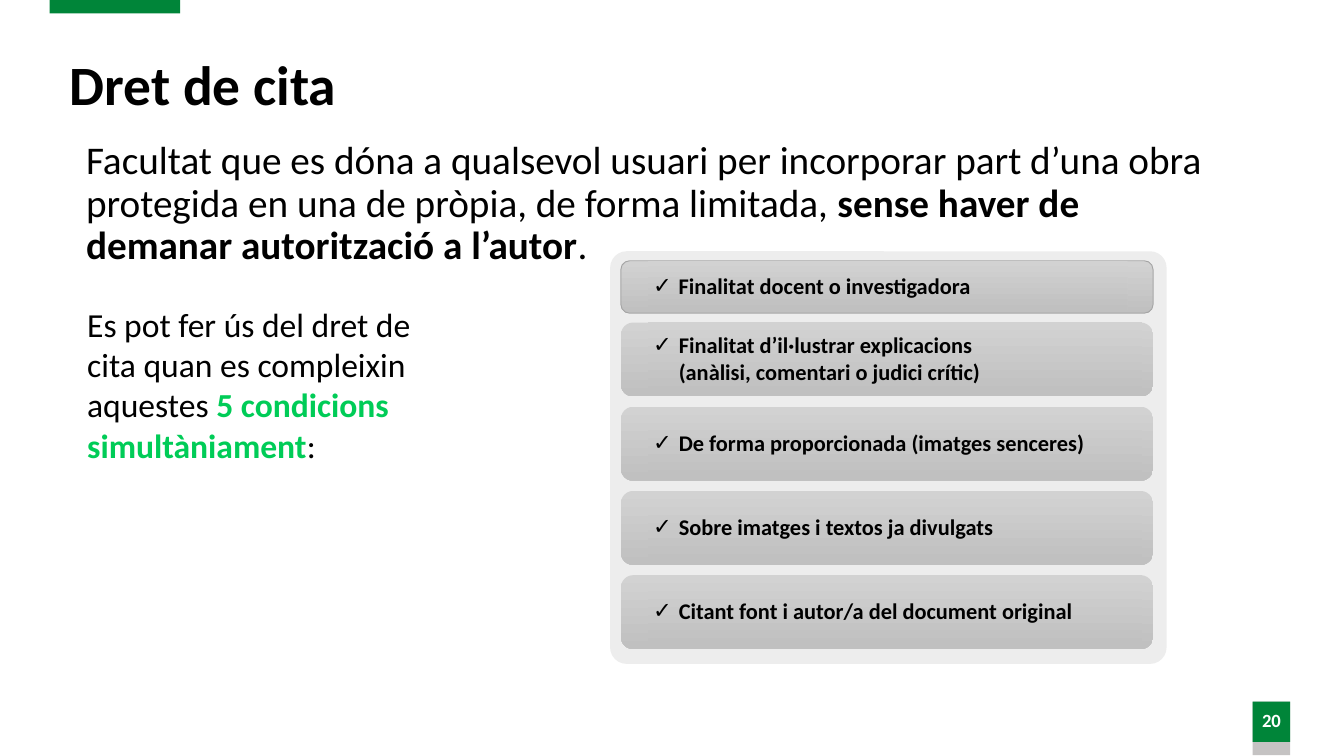
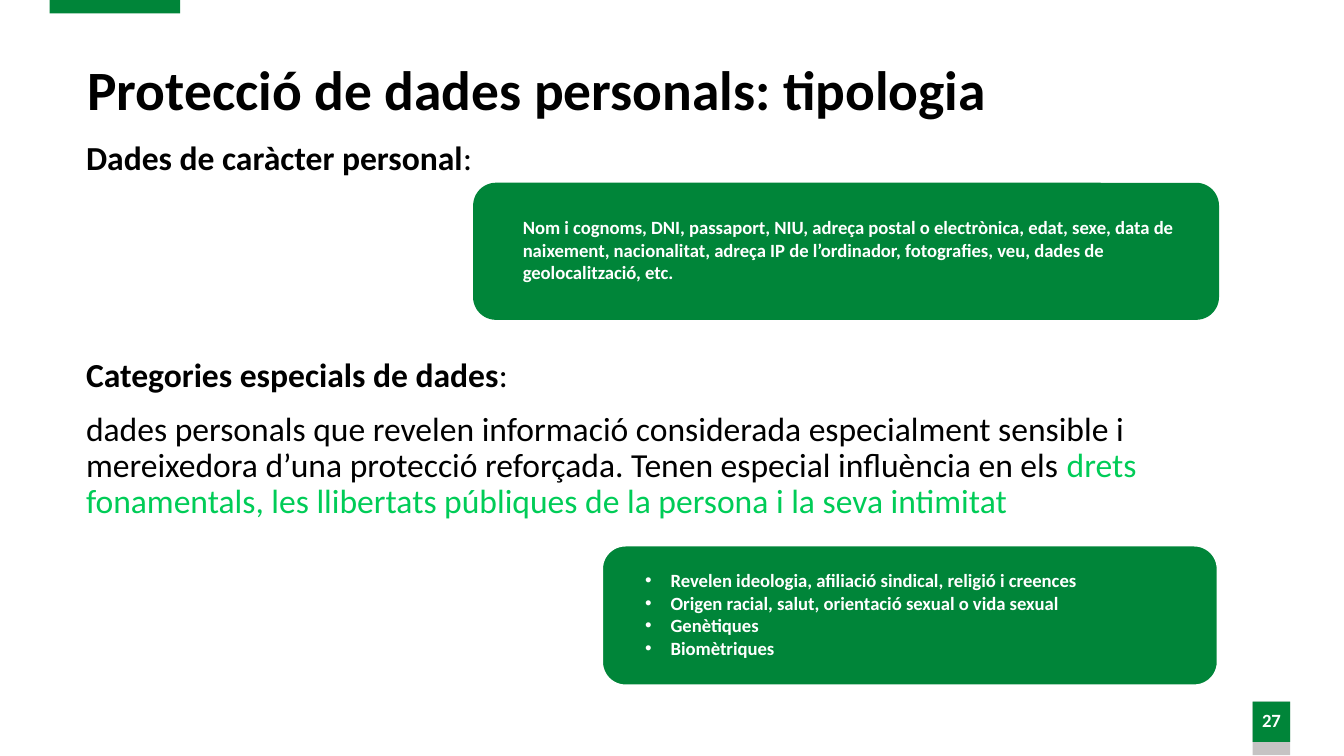
"""Build two slides on the right to quote and on personal data protection."""
from dataclasses import dataclass
from typing import NamedTuple, Optional

from lxml.etree import SubElement
from pptx import Presentation
from pptx.dml.color import RGBColor
from pptx.enum.shapes import MSO_SHAPE
from pptx.enum.text import MSO_ANCHOR, PP_ALIGN
from pptx.oxml.ns import qn
from pptx.util import Inches, Pt

COLORS = {
    "green": "008539",
    "accent": "00CC57",
    "black": "000000",
    "white": "FFFFFF",
    "tab": "C5C3C3",
    "panel": "EDEDED",
    "card_top": "D2D2D2",
    "card_bottom": "C0C0C0",
    "card_line": "A5A5A5",
}
FONT = "Calibri"
TIGHT = (0.04, 0.04, 0.04, 0.04)
BODY = (0.09, 0.04, 0.09, 0.04)
GRAY = ("card_top", "card_bottom")
GREEN = ("green",)


class Box(NamedTuple):
    left: float
    top: float
    width: float
    height: float

    def lengths(self):
        return [Inches(v) for v in self]


class Run(NamedTuple):
    text: str
    bold: bool = False
    color: str = "black"


@dataclass
class Card:
    box: Box
    label: Box
    lines: list[str]
    size: float
    fill: tuple[str, ...]
    color: str
    bullet: Optional[str] = None
    line: Optional[tuple[str, float]] = None


def rgb(name: str) -> RGBColor:
    return RGBColor.from_string(COLORS[name])


def add_bullet(p, char: str) -> None:
    pPr = p._p.get_or_add_pPr()
    pPr.set("marL", str(Inches(0.19)))
    pPr.set("indent", str(-Inches(0.19)))
    SubElement(pPr, qn("a:buFont")).set("typeface", "Arial")
    SubElement(pPr, qn("a:buChar")).set("char", char)


def write(sp, paragraphs: list[list[Run]], *, size: float, insets=(0.1, 0.05, 0.1, 0.05),
          anchor=MSO_ANCHOR.TOP, align=PP_ALIGN.LEFT, spacing: float = 1.0,
          gap: float = 0, bullet: Optional[str] = None) -> None:
    tf = sp.text_frame
    tf.word_wrap = True
    tf.vertical_anchor = anchor
    tf.margin_left, tf.margin_top, tf.margin_right, tf.margin_bottom = map(Inches, insets)
    for i, runs in enumerate(paragraphs):
        p = tf.add_paragraph() if i else tf.paragraphs[0]
        p.alignment = align
        p.line_spacing = spacing
        if i and gap:
            p.space_before = Pt(gap)
        if bullet:
            add_bullet(p, bullet)
        for run in runs:
            for n, piece in enumerate(run.text.split("\n")):
                if n:
                    p.add_line_break()
                r = p.add_run()
                r.text = piece
                r.font.name = FONT
                r.font.size = Pt(size)
                r.font.bold = run.bold
                r.font.color.rgb = rgb(run.color)


def add_text(slide, box: Box, paragraphs: list[list[Run]], **fmt) -> None:
    write(slide.shapes.add_textbox(*box.lengths()), paragraphs, **fmt)


def add_box(shapes, box: Box, fill: tuple[str, ...], kind=MSO_SHAPE.RECTANGLE,
            line: Optional[tuple[str, float]] = None):
    sp = shapes.add_shape(kind, *box.lengths())
    sp.shadow.inherit = False
    if len(fill) == 1:
        sp.fill.solid()
        sp.fill.fore_color.rgb = rgb(fill[0])
    else:
        sp.fill.gradient()
        sp.fill.gradient_angle = 270
        for stop, name in zip(sp.fill.gradient_stops, fill):
            stop.color.rgb = rgb(name)
    if line:
        sp.line.color.rgb = rgb(line[0])
        sp.line.width = Pt(line[1])
    else:
        sp.line.fill.background()
    return sp


def add_card(slide, card: Card) -> None:
    shapes = slide.shapes.add_group_shape().shapes
    add_box(shapes, card.box, card.fill, MSO_SHAPE.ROUNDED_RECTANGLE, card.line)
    label = add_box(shapes, card.label, card.fill)
    write(label, [[Run(text, True, card.color)] for text in card.lines], size=card.size,
          insets=TIGHT, anchor=MSO_ANCHOR.MIDDLE, bullet=card.bullet)


def add_base(prs, number: int, title: str, left: float, top: float):
    slide = prs.slides.add_slide(prs.slide_layouts[6])
    add_box(slide.shapes, Box(0.37, 0, 0.97, 0.1), GREEN)
    add_box(slide.shapes, Box(9.32, 5.22, 0.28, 0.4), ("tab",))
    badge = add_box(slide.shapes, Box(9.32, 5.22, 0.28, 0.3), GREEN)
    write(badge, [[Run(str(number), True, "white")]], size=10, insets=(0, 0.04, 0, 0.04),
          anchor=MSO_ANCHOR.MIDDLE, align=PP_ALIGN.CENTER, spacing=0.9)
    add_text(slide, Box(left, top, 9.11, 0.57), [[Run(title, True)]], size=29.7,
             anchor=MSO_ANCHOR.MIDDLE, spacing=0.9)
    return slide


def build_quote_slide(prs) -> None:
    slide = add_base(prs, 20, "Dret de cita", 0.42, 0.37)
    add_text(slide, Box(0.55, 1.01, 8.65, 0.95), [[
        Run("Facultat que es dóna a qualsevol usuari per incorporar part d’una obra "
            "protegida en una de pròpia, de forma limitada, "),
        Run("sense haver de demanar autorització a l’autor", True),
        Run("."),
    ]], size=21, insets=BODY, spacing=0.9)
    add_text(slide, Box(0.55, 2.21, 3.02, 1.62), [[
        Run("Es pot fer ús del dret de cita quan es compleixin aquestes "),
        Run("5 condicions simultàniament", True, "accent"),
        Run(":"),
    ]], size=18)
    panel = add_box(slide.shapes, Box(4.54, 1.87, 4.14, 3.07), ("panel",),
                    MSO_SHAPE.ROUNDED_RECTANGLE)
    panel.adjustments[0] = 0.04

    conditions = [
        "Finalitat docent o investigadora",
        "Finalitat d’il·lustrar explicacions\n(anàlisi, comentari o judici crític)",
        "De forma proporcionada (imatges senceres)",
        "Sobre imatges i textos ja divulgats",
        "Citant font i autor/a del document original",
    ]
    pitch = (4.28 - 2.4) / 3
    for i, text in enumerate(conditions):
        first = i == 0
        top = 1.94 if first else 2.4 + pitch * (i - 1)
        height = 0.39 if first else 0.55
        add_card(slide, Card(
            Box(4.62, top, 3.96, height),
            Box(4.82, top, 3.57 if first else 3.68, height - 0.02),
            [text], 12, GRAY, "black", "✓", ("card_line", 0.5) if first else None))


def build_data_slide(prs) -> None:
    slide = add_base(prs, 27, "Protecció de dades personals: tipologia", 0.55, 0.4)
    add_text(slide, Box(0.55, 1.01, 8.51, 0.48),
             [[Run("Dades de caràcter personal", True), Run(":")]],
             size=18, insets=BODY, spacing=0.9)
    add_card(slide, Card(
        Box(3.52, 1.36, 5.55, 1.02), Box(3.85, 1.44, 5.07, 0.84),
        ["Nom i cognoms, DNI, passaport, NIU, adreça postal o electrònica, edat, sexe, "
         "data de naixement, nacionalitat, adreça IP de l’ordinador, fotografies, veu, "
         "dades de geolocalització, etc."], 10, GREEN, "white"))
    add_text(slide, Box(0.55, 2.63, 8.51, 1.51), [
        [Run("Categories especials de dades", True), Run(":")],
        [Run("dades personals que revelen informació considerada especialment sensible i "
             "mereixedora d’una protecció reforçada. Tenen especial influència en els "),
         Run("drets fonamentals, les llibertats públiques de la persona i la seva intimitat",
             color="accent")],
    ], size=18, insets=BODY, spacing=0.9, gap=9)
    add_card(slide, Card(
        Box(4.48, 4.06, 4.58, 1.04), Box(4.76, 4.14, 4.22, 0.86),
        ["Revelen ideologia, afiliació sindical, religió i creences",
         "Origen racial, salut, orientació sexual o vida sexual",
         "Genètiques",
         "Biomètriques"], 10, GREEN, "white", "•", ("white", 1)))


def main() -> None:
    prs = Presentation()
    prs.slide_width = Inches(10)
    prs.slide_height = Inches(10 * 9 / 16)
    build_quote_slide(prs)
    build_data_slide(prs)
    prs.save("out.pptx")


if __name__ == "__main__":
    main()
